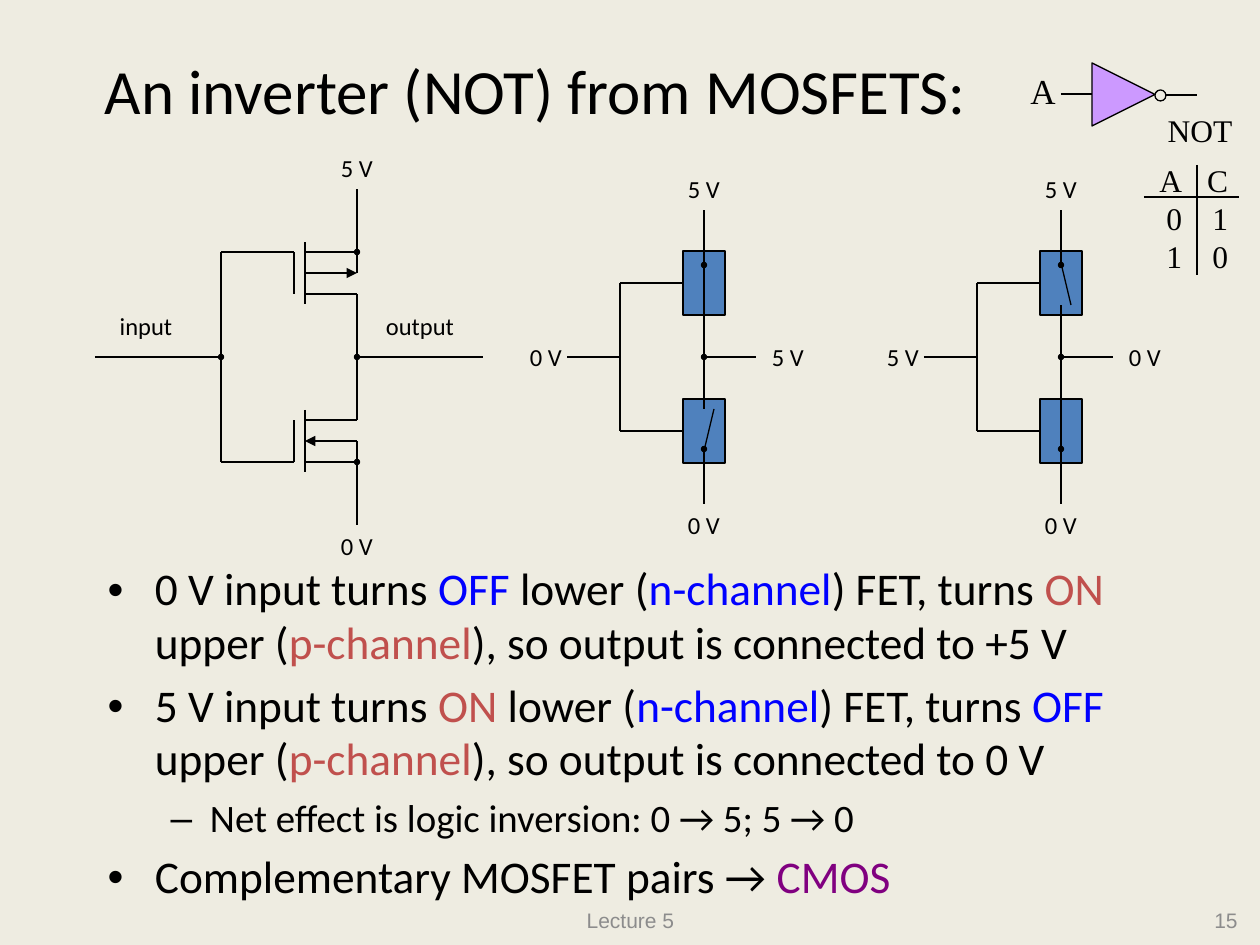
from lxml import etree
from pptx import Presentation
from pptx.dml.color import RGBColor
from pptx.enum.shapes import MSO_CONNECTOR, MSO_SHAPE
from pptx.enum.text import MSO_ANCHOR, MSO_AUTO_SIZE, PP_ALIGN
from pptx.oxml.ns import qn
from pptx.util import Pt

PX = 914400 / 126
STRAIGHT = MSO_CONNECTOR.STRAIGHT
RECTANGLE, OVAL, TRIANGLE = MSO_SHAPE.RECTANGLE, MSO_SHAPE.OVAL, MSO_SHAPE.ISOSCELES_TRIANGLE
LEFT, CENTER, RIGHT = PP_ALIGN.LEFT, PP_ALIGN.CENTER, PP_ALIGN.RIGHT
TOP, MIDDLE = MSO_ANCHOR.TOP, MSO_ANCHOR.MIDDLE
NO_AUTOFIT = MSO_AUTO_SIZE.NONE
LEFT_SIDE = 1
UP, DOWN = -1, 1

BLACK = RGBColor(0x00, 0x00, 0x00)
CREAM = RGBColor(0xEE, 0xEC, 0xE1)
GRAY = RGBColor(0x8C, 0x8C, 0x8C)
STEEL = RGBColor(0x4F, 0x81, 0xBD)
LILAC = RGBColor(0xCC, 0x99, 0xFF)
BLUE = RGBColor(0x00, 0x00, 0xFF)
RED = RGBColor(0xC0, 0x50, 0x4D)
PURPLE = RGBColor(0x80, 0x00, 0x80)

SANS, SERIF, FOOTER_FONT = "Calibri", "Times New Roman", "Arial"
NO_TABLE_STYLE = "{2D5ABB26-0587-4C30-8999-92F81FD0307C}"

CHANNELS = {"OFF": BLUE, "ON": RED}
BULLETS = [
    (0, [("0 V input turns ", BLACK), ("OFF", BLUE), (" lower (", BLACK), ("n-channel", BLUE),
         (") FET, turns ", BLACK), ("ON", RED), (" upper (", BLACK), ("p-channel", RED),
         ("), so output is connected to +5 V", BLACK)]),
    (0, [("5 V input turns ", BLACK), ("ON", RED), (" lower (", BLACK), ("n-channel", BLUE),
         (") FET, turns ", BLACK), ("OFF", BLUE), (" upper (", BLACK), ("p-channel", RED),
         ("), so output is connected to 0 V", BLACK)]),
    (1, [("Net effect is logic inversion: 0 → 5; 5 → 0", BLACK)]),
    (0, [("Complementary MOSFET pairs → ", BLACK), ("CMOS", PURPLE)]),
]
TRUTH = [("A", "C"), ("0", "1"), ("1", "0")]


def px(*lengths):
    """Turn pixel lengths into EMU."""
    return [round(length * PX) for length in lengths]


def style(font, size, name, color):
    """Set size, family and colour of a font."""
    font.size, font.name = Pt(size), name
    font.color.rgb = color


def wire(slide, x1, y1, x2, y2, arrow=False):
    """Draw a thin black line, with an arrowhead at its end if asked."""
    line = slide.shapes.add_connector(STRAIGHT, *px(x1, y1, x2, y2))
    line.line.color.rgb = BLACK
    line.line.width = Pt(0.75)
    properties = line._element.spPr
    if arrow:
        etree.SubElement(properties.find(qn("a:ln")), qn("a:tailEnd"), type="triangle")
    etree.SubElement(properties, qn("a:effectLst"))
    return line


def block(slide, kind, box, fill=None):
    """Draw a preset shape with a thin black outline."""
    shape = slide.shapes.add_shape(kind, *px(*box))
    shape.shadow.inherit = False
    if fill is None:
        shape.fill.background()
    else:
        shape.fill.solid()
        shape.fill.fore_color.rgb = fill
    shape.line.color.rgb = BLACK
    shape.line.width = Pt(0.75)
    return shape


def dot(slide, x, y):
    """Mark a junction centred on a point."""
    block(slide, OVAL, (x - 2.5, y - 2.5, 5, 5), BLACK)


def label(slide, text, box, size, font, color=BLACK, align=CENTER, anchor=TOP):
    """Write one line of text in a box."""
    frame = slide.shapes.add_textbox(*px(*box)).text_frame
    frame.word_wrap = False
    frame.vertical_anchor = anchor
    line = frame.paragraphs[0]
    line.text, line.alignment = text, align
    style(line.font, size, font, color)


def signal(slide, text, x, y, width=62):
    """Write a circuit label centred on a point."""
    label(slide, text, (x - width / 2, y - 21, width, 42), 14, SANS)


def mosfet_inverter(slide, box):
    """Draw the transistor circuit of the inverter."""
    left, top, width, height = box
    mid = top + height // 2
    bus, gate, channel, drain = left + 126, left + 199, left + 210, left + 262
    for side, volts in ((UP, "5 V"), (DOWN, "0 V")):
        inner, body, outer, rail = (mid + side * step for step in (63, 84, 105, 168))
        wire(slide, bus, outer, gate, outer)
        wire(slide, gate, outer, gate, inner)
        wire(slide, channel, inner - side * 10, channel, outer + side * 10)
        wire(slide, channel, outer, drain, outer)
        wire(slide, channel, inner, drain, inner)
        wire(slide, drain, inner, drain, mid)
        wire(slide, drain, body, drain, rail)
        start, end = (channel, drain) if side == UP else (drain, channel)
        wire(slide, start, body, end, body, arrow=True)
        dot(slide, drain, outer)
        signal(slide, volts, drain, mid + side * 189)
    wire(slide, bus, mid - 105, bus, mid + 105)
    wire(slide, left, mid, bus, mid)
    wire(slide, drain, mid, left + width, mid)
    dot(slide, bus, mid)
    dot(slide, drain, mid)
    signal(slide, "input", left + 51, mid - 31, 78)
    signal(slide, "output", left + 325, mid - 31, 93)


def switch_inverter(slide, box, volts_in, volts_out, closed_side):
    """Draw the inverter as two switches, one of them closed."""
    left, top, width, height = box
    mid = top + height // 2
    bus, switch, pole = left + 105, left + 168, left + 189
    for side, volts in ((UP, "5 V"), (DOWN, "0 V")):
        contact, center, pivot, rail = (mid + side * step for step in (52, 74, 94, 147))
        housing = block(slide, RECTANGLE, (switch, center - 32, 42, 64), STEEL)
        wire(slide, bus, center, switch, center).end_connect(housing, LEFT_SIDE)
        wire(slide, pole, mid, pole, contact)
        wire(slide, pole, pivot, pole, rail)
        wire(slide, pole, pivot, pole if side == closed_side else pole + 10, contact)
        dot(slide, pole, mid + side * 92)
        signal(slide, volts, pole, mid + side * 168)
    wire(slide, bus, mid - 74, bus, mid + 74)
    wire(slide, left + 52, mid, bus, mid)
    wire(slide, pole, mid, left + 241, mid)
    dot(slide, pole, mid)
    signal(slide, volts_in, left + 31, mid)
    signal(slide, volts_out, left + width - 31, mid)


def not_gate(slide, box):
    """Draw the logic symbol with its input name."""
    left, top, width, height = box
    mid = top + height // 2
    block(slide, TRIANGLE, (left + 74, top, height, height), LILAC).rotation = 90
    wire(slide, left + 43, mid, left + 74, mid)
    wire(slide, left + 148, mid + 1, left + width, mid + 1)
    block(slide, OVAL, (left + 137, mid - 4, 11, 11))
    label(slide, "A", (left, top, 50, 54), 20, SERIF, align=LEFT)


def truth_table(slide, box):
    """Place the truth table under its NOT heading."""
    left, top, width, height = box
    label(slide, "NOT", (left, top, 112, 63), 18, SERIF)
    split, row_height = 53, 38
    grid = slide.shapes.add_table(3, 2, *px(left, top + 59, width, 3 * row_height)).table
    grid._tbl.tblPr.find(qn("a:tableStyleId")).text = NO_TABLE_STYLE
    grid.first_row = grid.horz_banding = False
    for column, column_width in zip(grid.columns, px(split, width - split)):
        column.width = column_width
    for row, values in zip(grid.rows, TRUTH):
        row.height = px(row_height)[0]
        for cell, value, gap in zip(row.cells, values, px(15, 11)):
            cell.fill.background()
            cell.margin_left = cell.margin_top = cell.margin_bottom = 0
            cell.margin_right = gap
            line = cell.text_frame.paragraphs[0]
            line.text, line.alignment = value, RIGHT
            style(line.font, 18, SERIF, BLACK)
    wire(slide, left, top + 92, left + width, top + 92)
    wire(slide, left + split, top + 60, left + split, top + height)


def heading(slide, box):
    """Fill the title placeholder."""
    title = slide.shapes.title
    title.left, title.top, title.width, title.height = px(*box)
    title.text_frame.vertical_anchor = MIDDLE
    line = title.text_frame.paragraphs[0]
    line.text, line.alignment = "An inverter (NOT) from MOSFETS:", CENTER
    style(line.font, 36, SANS, BLACK)


def explanation(slide, box):
    """Fill the body placeholder with the bullets."""
    body = slide.placeholders[1]
    body.left, body.top, body.width, body.height = px(*box)
    frame = body.text_frame
    frame.auto_size = NO_AUTOFIT
    for index, (level, pieces) in enumerate(BULLETS):
        line = frame.add_paragraph() if index else frame.paragraphs[0]
        line.level, line.line_spacing, line.space_before = level, 0.98, Pt(5.5)
        line.font.size, line.font.name = Pt(22.2 if level else 25.9), SANS
        for text, color in pieces:
            run = line.add_run()
            run.text = text
            run.font.color.rgb = color


def main():
    """Build the slide and save it."""
    deck = Presentation()
    deck.slide_width, deck.slide_height = px(1260, 945)
    slide = deck.slides.add_slide(deck.slide_layouts[1])
    slide.background.fill.solid()
    slide.background.fill.fore_color.rgb = CREAM
    heading(slide, (0, 10, 1071, 158))
    explanation(slide, (95, 557, 1071, 336))
    mosfet_inverter(slide, (95, 147, 388, 420))
    switch_inverter(slide, (515, 168, 304, 378), "0 V", "5 V", UP)
    switch_inverter(slide, (872, 168, 304, 378), "5 V", "0 V", DOWN)
    not_gate(slide, (1018, 63, 179, 63))
    truth_table(slide, (1144, 105, 95, 170))
    label(slide, "Lecture 5", (431, 895, 399, 50), 12, FOOTER_FONT, GRAY, CENTER, MIDDLE)
    label(slide, "15", (956, 895, 294, 50), 12, FOOTER_FONT, GRAY, RIGHT, MIDDLE)
    deck.save("out.pptx")


if __name__ == "__main__":
    main()
